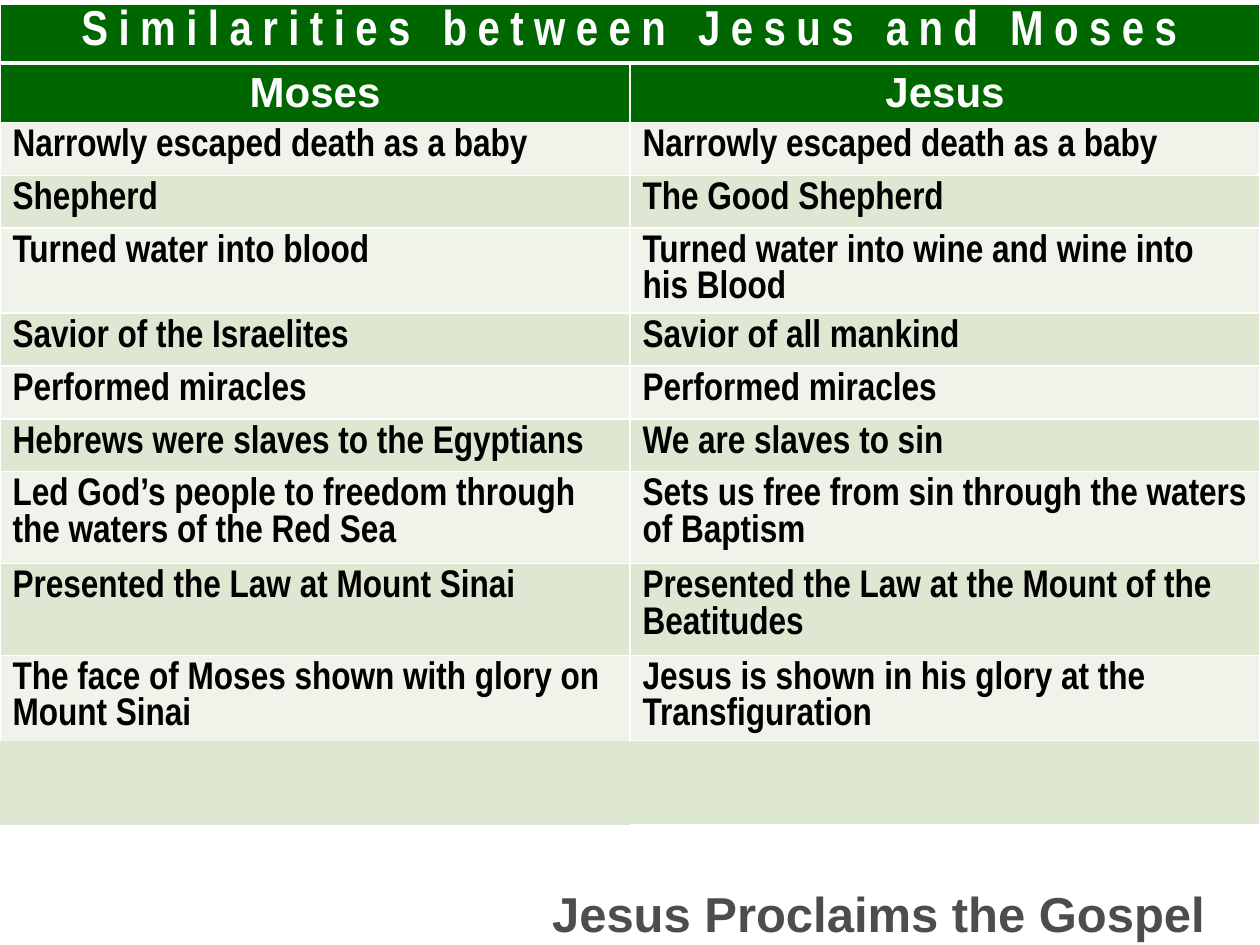
from dataclasses import dataclass

from lxml.etree import SubElement
from pptx import Presentation
from pptx.dml.color import RGBColor
from pptx.enum.text import MSO_AUTO_SIZE, PP_ALIGN
from pptx.oxml import parse_xml
from pptx.oxml.ns import qn
from pptx.util import Inches, Pt

WIDTH, HEIGHT = 10, 7.5
GREEN, PALE, SAGE, WHITE, BLACK, GRAY = "006600", "EFF3EA", "DEE7D1", "FFFFFF", "000000", "4D4D4D"
NAMESPACE = "http://schemas.openxmlformats.org/drawingml/2006/main"
GRID = {"L": 1, "R": 1, "T": 1, "B": 1}


@dataclass(frozen=True)
class TextStyle:
    """Look of the text in one kind of cell or box."""
    size: int
    face: str
    color: str
    align: PP_ALIGN = PP_ALIGN.LEFT


@dataclass(frozen=True)
class Comparison:
    """One row that sets Moses beside Jesus."""
    moses: str
    jesus: str
    height: float = 0.42


TITLE = TextStyle(28, "Arial Narrow", WHITE, PP_ALIGN.CENTER)
HEADING = TextStyle(24, "Arial", WHITE, PP_ALIGN.CENTER)
BODY = TextStyle(22, "Arial Narrow", BLACK)
FOOTER = TextStyle(28, "Arial", GRAY, PP_ALIGN.RIGHT)
HEADER_HEIGHT = 0.47

COMPARISONS = [
    Comparison("Narrowly escaped death as a baby", "Narrowly escaped death as a baby"),
    Comparison("Shepherd", "The Good Shepherd"),
    Comparison("Turned water into blood", "Turned water into wine and wine into his Blood", 0.67),
    Comparison("Savior of the Israelites", "Savior of all mankind"),
    Comparison("Performed miracles", "Performed miracles"),
    Comparison("Hebrews were slaves to the Egyptians", "We are slaves to sin"),
    Comparison("Led God’s people to freedom through the waters of the Red Sea",
               "Sets us free from sin through the waters of Baptism", 0.73),
    Comparison("Presented the Law at Mount Sinai",
               "Presented the Law at the Mount of the Beatitudes", 0.73),
    Comparison("The face of Moses shown with glory on Mount Sinai",
               "Jesus is shown in his glory at the Transfiguration", 0.67),
    Comparison("", "", 0.67),
]


def rgb(color: str) -> RGBColor:
    """Turn a hex string into a colour."""
    return RGBColor.from_string(color)


def write(frame, text: str, style: TextStyle):
    """Put one styled paragraph in a text frame and return it."""
    para = frame.paragraphs[0]
    if text:
        para.add_run().text = text
    para.alignment = style.align
    para.font.size, para.font.name, para.font.bold = Pt(style.size), style.face, True
    para.font.color.rgb = rgb(style.color)
    for span in para.runs:
        span.font.size, span.font.name, span.font.bold = Pt(style.size), style.face, True
        span.font.color.rgb = rgb(style.color)
    return para


def draw_cell(cell, text: str, style: TextStyle, fill: str, borders: dict) -> None:
    """Draw a cell with its text, fill and white borders in points."""
    properties = cell._tc.get_or_add_tcPr()
    for side in "LRTB":
        points = borders.get(side, 0)
        line = SubElement(properties, qn(f"a:ln{side}"), w=str(Pt(points)))
        if points:
            SubElement(SubElement(line, qn("a:solidFill")), qn("a:srgbClr"), val=WHITE)
        else:
            SubElement(line, qn("a:noFill"))
    cell.fill.solid()
    cell.fill.fore_color.rgb = rgb(fill)
    write(cell.text_frame, text, style)


def draw_table(page) -> None:
    """Draw the comparison table across the page."""
    heights = [HEADER_HEIGHT] * 2 + [row.height for row in COMPARISONS]
    frame = page.shapes.add_table(len(heights), 2, 0, Inches(0.03),
                                  Inches(WIDTH), Inches(sum(heights)))
    table = frame.table
    table.first_row = table.horz_banding = False
    for row, height in zip(table.rows, heights):
        row.height = Inches(height)
    table.cell(0, 0).merge(table.cell(0, 1))
    title_borders = {**GRID, "B": 3}
    draw_cell(table.cell(0, 0), "Similarities between Jesus and Moses", TITLE, GREEN, title_borders)
    draw_cell(table.cell(0, 1), "", TITLE, GREEN, title_borders)
    for span in table.cell(0, 0).text_frame.paragraphs[0].runs:
        span.font._element.set("spc", "600")
    for column, name in enumerate(("Moses", "Jesus")):
        draw_cell(table.cell(1, column), name, HEADING, GREEN, {**GRID, "T": 3})
    last = len(COMPARISONS) - 1
    for index, row in enumerate(COMPARISONS):
        fill = SAGE if index % 2 else PALE
        left = {last - 1: {"L": 1, "T": 1, "R": 1}, last: {}}.get(index, GRID)
        right = {"T": 1, "R": 1, "B": 1} if index == last else GRID
        draw_cell(table.cell(index + 2, 0), row.moses, BODY, fill, left)
        draw_cell(table.cell(index + 2, 1), row.jesus, BODY, fill, right)


def draw_footer(page) -> None:
    """Draw the lesson name at the bottom right."""
    box = page.shapes.add_textbox(Inches(0.383 * WIDTH), Inches(0.928 * HEIGHT),
                                  Inches(0.583 * WIDTH), Inches(0.117 * HEIGHT))
    box.text_frame.word_wrap = True
    box.text_frame.auto_size = MSO_AUTO_SIZE.SHAPE_TO_FIT_TEXT
    para = write(box.text_frame, "Jesus Proclaims the Gospel", FOOTER)
    outline = (f'<a:ln xmlns:a="{NAMESPACE}" w="{Pt(0.75)}"><a:solidFill>'
               f'<a:srgbClr val="{WHITE}"/></a:solidFill></a:ln>')
    para.runs[0].font._element.insert(0, parse_xml(outline))


def main() -> None:
    """Build and save the slide."""
    deck = Presentation()
    deck.slide_width, deck.slide_height = Inches(WIDTH), Inches(HEIGHT)
    page = deck.slides.add_slide(deck.slide_layouts[6])
    draw_table(page)
    draw_footer(page)
    deck.save("out.pptx")


if __name__ == "__main__":
    main()
